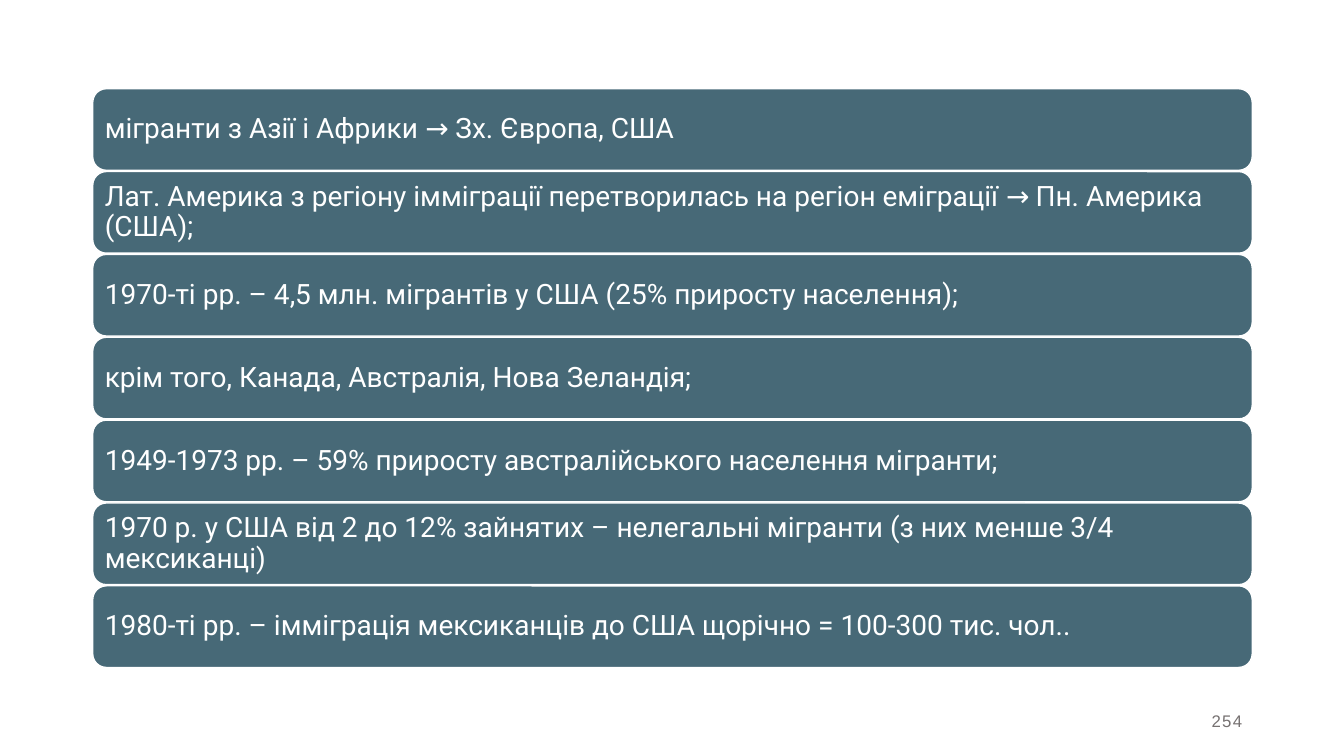
from pptx import Presentation
from pptx.dml.color import RGBColor
from pptx.enum.shapes import MSO_SHAPE
from pptx.enum.text import MSO_ANCHOR, PP_ALIGN
from pptx.util import Inches, Pt

MIGRATION_FACTS = [
    "мігранти з Азії і Африки → Зх. Європа, США",
    "Лат. Америка з регіону імміграції перетворилась на регіон еміграції → Пн. Америка (США);",
    "1970-ті рр. – 4,5 млн. мігрантів у США (25% приросту населення);",
    "крім того, Канада, Австралія, Нова Зеландія;",
    "1949-1973 рр. – 59% приросту австралійського населення мігранти;",
    "1970 р. у США від 2 до 12% зайнятих – нелегальні мігранти (з них менше 3/4 мексиканці)",
    "1980-ті рр. – імміграція мексиканців до США щорічно = 100-300 тис. чол..",
]
PAGE_NUMBER = "254"
COLORS = {"bar": "476977", "white": "FFFFFF", "page": "767171"}
LEFT, TOP, WIDTH, HEIGHT = 0.92, 0.88, 11.5, 0.81
PITCH = 0.822
INSET = Inches(0.08)


def color(name):
    return RGBColor.from_string(COLORS[name])


def add_run(paragraph, text, size, font, color_name):
    run = paragraph.add_run()
    run.text = text
    run.font.size = Pt(size)
    run.font.name = font
    run.font.color.rgb = color(color_name)
    return run


def add_fact(slide, row, fact):
    bar = slide.shapes.add_shape(
        MSO_SHAPE.ROUNDED_RECTANGLE,
        Inches(LEFT), Inches(TOP + row * PITCH), Inches(WIDTH), Inches(HEIGHT),
    )
    bar.shadow.inherit = False
    bar.fill.solid()
    bar.fill.fore_color.rgb = color("bar")
    bar.line.color.rgb = color("white")
    bar.line.width = Pt(1)
    frame = bar.text_frame
    frame.word_wrap = True
    frame.vertical_anchor = MSO_ANCHOR.MIDDLE
    frame.margin_left = frame.margin_right = INSET
    frame.margin_top = frame.margin_bottom = INSET
    paragraph = frame.paragraphs[0]
    paragraph.alignment = PP_ALIGN.LEFT
    paragraph.line_spacing = 0.9
    paragraph.space_after = Pt(7)
    add_run(paragraph, fact, 20, "Roboto", "white")


def add_page_number(slide):
    frame = slide.shapes.add_textbox(
        Inches(9.42), Inches(6.95), Inches(3), Inches(0.4)
    ).text_frame
    frame.word_wrap = True
    frame.vertical_anchor = MSO_ANCHOR.MIDDLE
    paragraph = frame.paragraphs[0]
    paragraph.alignment = PP_ALIGN.RIGHT
    run = add_run(paragraph, PAGE_NUMBER, 12, "Arial", "page")
    run.font._element.set("spc", "100")


def main():
    deck = Presentation()
    deck.slide_width = Inches(13.33)
    deck.slide_height = Inches(7.5)
    slide = deck.slides.add_slide(deck.slide_layouts[6])
    add_page_number(slide)
    for row, fact in enumerate(MIGRATION_FACTS):
        add_fact(slide, row, fact)
    deck.save("out.pptx")


if __name__ == "__main__":
    main()
